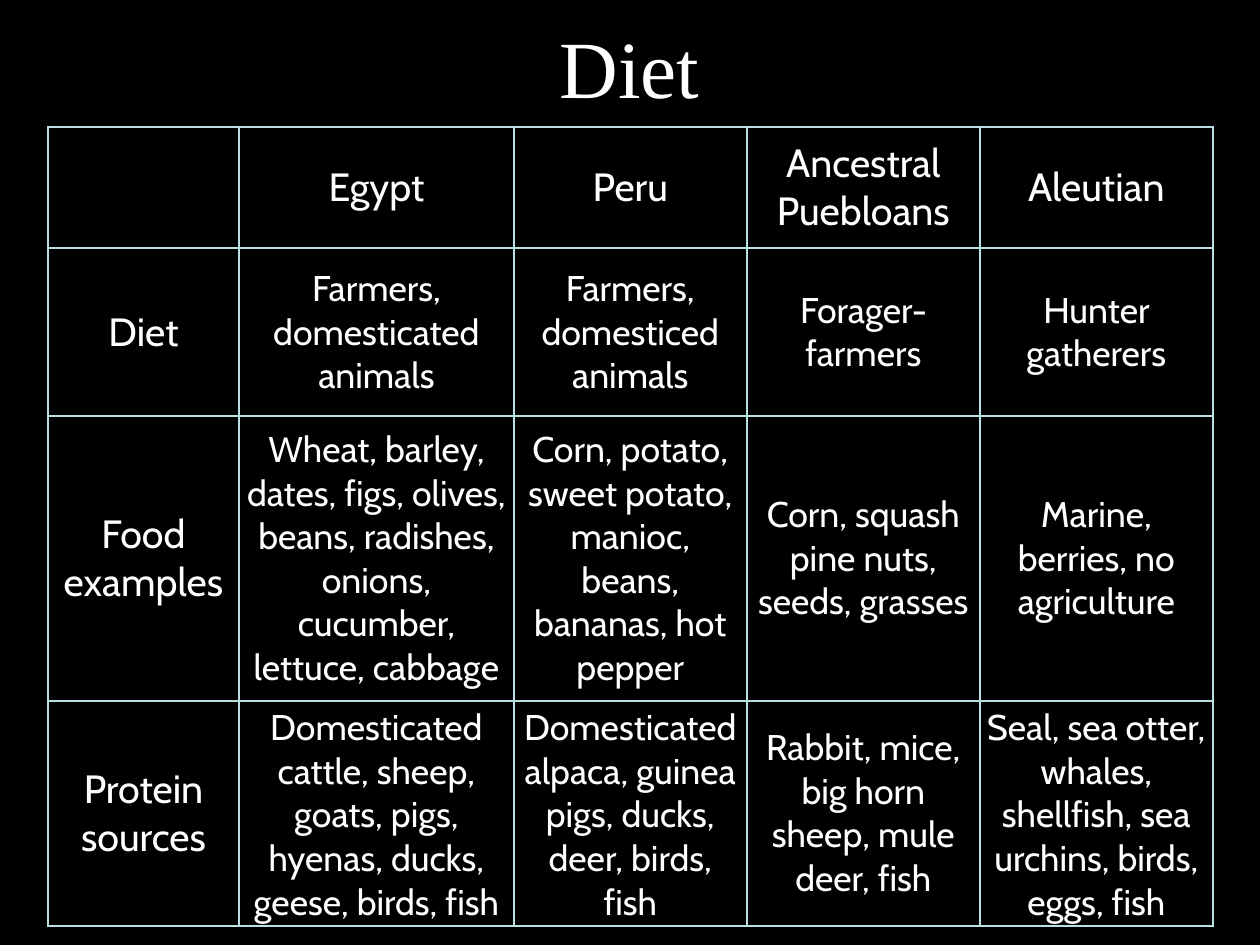
from pptx import Presentation
from pptx import util as u
from pptx.dml import color
from pptx.enum import text
from pptx.oxml import parse_xml
from pptx.oxml import ns

BLACK, WHITE, EDGE = "000000", "FFFFFF", "BBE0E3"
PAD = u.Pt(4.5)
WIDTHS = [155.5, 223.2] + [189.4] * 3
HEIGHTS = [98.6, 136.8, 231.1, 180.7]
ROWS = [
    ["", "Egypt", "Peru", "Ancestral Puebloans", "Aleutian"],
    ["Diet", "Farmers, domesticated animals", "Farmers, domesticed animals",
     "Forager-farmers", "Hunter gatherers"],
    ["Food examples",
     "Wheat, barley, dates, figs, olives, beans, radishes, onions, cucumber, lettuce, cabbage",
     "Corn, potato, sweet potato, manioc, beans, bananas, hot pepper",
     "Corn, squash pine nuts, seeds, grasses",
     "Marine, berries, no agriculture"],
    ["Protein sources",
     "Domesticated cattle, sheep, goats, pigs, hyenas, ducks, geese, birds, fish",
     "Domesticated alpaca, guinea pigs, ducks, deer, birds, fish",
     "Rabbit, mice, big horn sheep, mule deer, fish",
     "Seal, sea otter, whales, shellfish, sea urchins, birds, eggs, fish"],
]


def paint(fmt, tone):
    fmt.solid()
    fmt.fore_color.rgb = color.RGBColor.from_string(tone)


def write(frame, words, size, face):
    line = frame.paragraphs[0]
    line.alignment = text.PP_ALIGN.CENTER
    run = line.add_run()
    run.text = words
    run.font.size = u.Pt(size)
    run.font.name = face
    paint(run.font.fill, WHITE)


def inset(part):
    part.margin_left = part.margin_right = PAD
    part.margin_top = part.margin_bottom = PAD
    part.vertical_anchor = text.MSO_ANCHOR.MIDDLE


def border(cell, tone, width):
    props = cell._tc.get_or_add_tcPr()
    for spot, side in enumerate("LRTB"):
        props.insert(spot, parse_xml(
            f'<a:ln{side} {ns.nsdecls("a")} w="{u.Pt(width)}"><a:solidFill>'
            f'<a:srgbClr val="{tone}"/></a:solidFill></a:ln{side}>'))


def title(slide, left, top, width, height):
    box = slide.shapes.add_textbox(*map(u.Pt, (left, top, width, height)))
    frame = box.text_frame
    frame.word_wrap = True
    inset(frame)
    write(frame, "Diet", 66, "Times New Roman")


def grid(slide, left, top):
    size = sum(WIDTHS), sum(HEIGHTS)
    table = slide.shapes.add_table(
        len(ROWS), len(WIDTHS), *map(u.Pt, (left, top, *size))).table
    table.first_row = table.horz_banding = False
    for col, width in zip(table.columns, WIDTHS):
        col.width = u.Pt(width)
    for row, height in zip(table.rows, HEIGHTS):
        row.height = u.Pt(height)
    for r, row in enumerate(ROWS):
        for c, words in enumerate(row):
            cell = table.cell(r, c)
            inset(cell)
            paint(cell.fill, BLACK)
            border(cell, EDGE, 2)
            if words:
                write(cell.text_frame, words, 29 if r and c else 32, "Cabin")


def main():
    deck = Presentation()
    deck.slide_width, deck.slide_height = u.Pt(1024), u.Pt(768)
    slide = deck.slides.add_slide(deck.slide_layouts[6])
    paint(slide.background.fill, BLACK)
    title(slide, 97.2, -31.7, 828.7, 171.4)
    grid(slide, 38.9, 103)
    deck.save("out.pptx")


if __name__ == "__main__":
    main()
